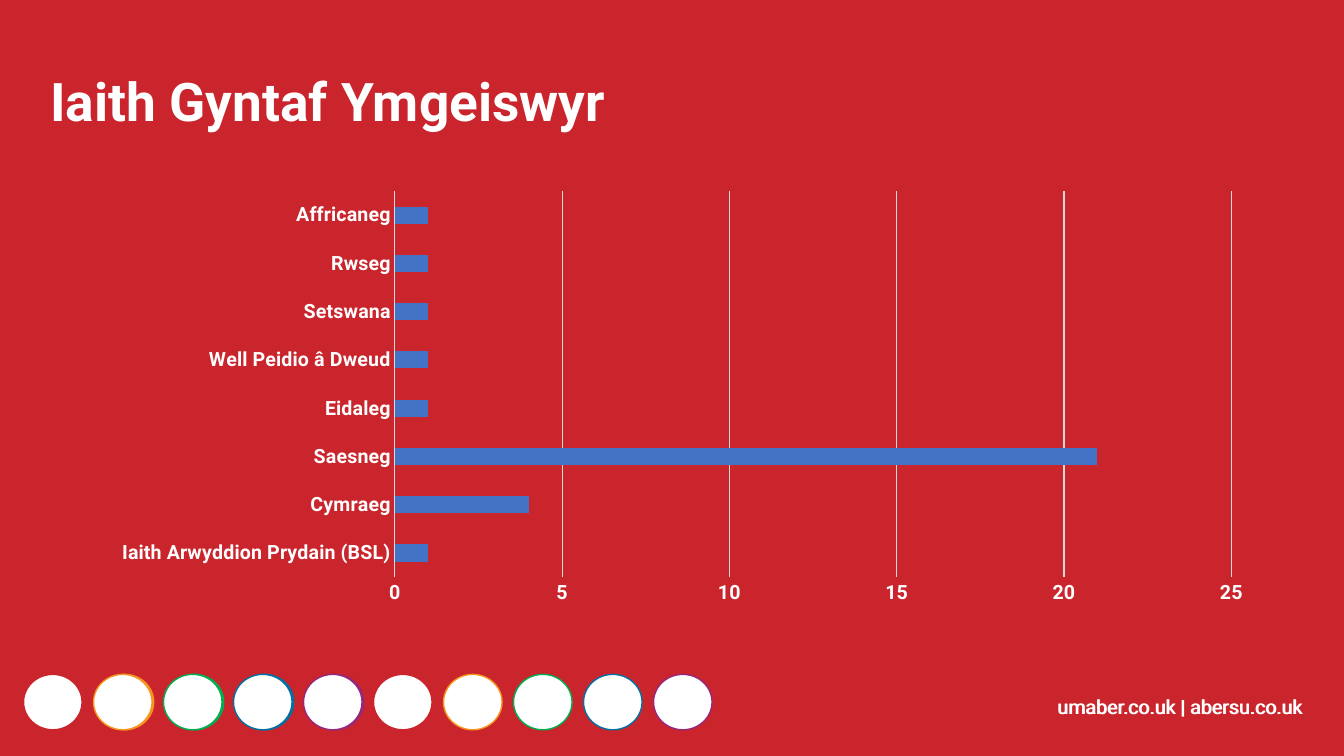
from dataclasses import dataclass

from pptx import Presentation
from pptx.chart.data import CategoryChartData
from pptx.dml.color import RGBColor
from pptx.enum.chart import XL_CHART_TYPE, XL_TICK_MARK
from pptx.enum.shapes import MSO_SHAPE
from pptx.enum.text import MSO_ANCHOR, MSO_AUTO_SIZE, PP_ALIGN
from pptx.slide import Slide
from pptx.util import Pt

RED = RGBColor(0xCA, 0x25, 0x2C)
ORANGE = RGBColor(0xF7, 0x94, 0x1F)
GREEN = RGBColor(0x00, 0xAF, 0x50)
TEAL = RGBColor(0x01, 0x71, 0xA3)
PURPLE = RGBColor(0x95, 0x27, 0x7D)
WHITE = RGBColor(0xFF, 0xFF, 0xFF)
GREY = RGBColor(0xD9, 0xD9, 0xD9)
BLUE = RGBColor(0x44, 0x72, 0xC4)
HUES = (RED, ORANGE, GREEN, TEAL, PURPLE)
FONT = "Roboto"
PITCH = 50

VOTES = {
    "Iaith Arwyddion Prydain (BSL)": 1,
    "Cymraeg": 4,
    "Saesneg": 21,
    "Eidaleg": 1,
    "Well Peidio â Dweud": 1,
    "Setswana": 1,
    "Rwseg": 1,
    "Affricaneg": 1,
}


@dataclass
class Disc:
    left: float
    fill: RGBColor
    line: RGBColor


def style(font, size: float, bold: bool) -> None:
    font.name = FONT
    font.size = Pt(size)
    font.bold = bold
    font.color.rgb = WHITE


def draw_disc(slide: Slide, disc: Disc) -> None:
    shape = slide.shapes.add_shape(
        MSO_SHAPE.OVAL, Pt(disc.left), Pt(481.7), Pt(41.8), Pt(39.6))
    shape.shadow.inherit = False
    shape.fill.solid()
    shape.fill.fore_color.rgb = disc.fill
    shape.line.color.rgb = disc.line
    shape.line.width = Pt(1)


def draw_title(slide: Slide) -> None:
    title = slide.shapes.title
    title.left, title.top = Pt(28.8), Pt(50.4)
    title.width, title.height = Pt(822.2), Pt(63.4)
    frame = title.text_frame
    frame.text = "Iaith Gyntaf Ymgeiswyr"
    frame.vertical_anchor = MSO_ANCHOR.TOP
    frame.auto_size = MSO_AUTO_SIZE.NONE
    line = frame.paragraphs[0]
    line.alignment = PP_ALIGN.LEFT
    line.line_spacing = 0.9
    style(line.runs[0].font, 38, True)


def draw_link(slide: Slide, left: float) -> None:
    box = slide.shapes.add_textbox(Pt(left), Pt(492.5), Pt(201.6), Pt(24.5))
    frame = box.text_frame
    frame.word_wrap = True
    frame.text = "umaber.co.uk | abersu.co.uk"
    style(frame.paragraphs[0].runs[0].font, 14, False)


def draw_chart(slide: Slide) -> None:
    data = CategoryChartData()
    data.categories = list(VOTES)
    data.add_series("Series 1", list(VOTES.values()))
    chart = slide.shapes.add_chart(
        XL_CHART_TYPE.BAR_CLUSTERED,
        Pt(70.6), Pt(130.3), Pt(833.8), Pt(308.2), data).chart
    chart.has_legend = False
    chart.has_title = False
    style(chart.font, 14, True)

    plot = chart.plots[0]
    plot.gap_width = 182
    plot.vary_by_categories = False
    bars = plot.series[0].format.fill
    bars.solid()
    bars.fore_color.rgb = BLUE

    names, scale = chart.category_axis, chart.value_axis
    for axis in (names, scale):
        axis.major_tick_mark = XL_TICK_MARK.NONE
        axis.minor_tick_mark = XL_TICK_MARK.NONE
        style(axis.tick_labels.font, 14, True)
    scale.minimum_scale, scale.maximum_scale = 0, 25
    scale.major_unit = 5
    scale.has_major_gridlines = True
    scale.format.line.fill.background()
    for rule in (names.format.line, scale.major_gridlines.format.line):
        rule.color.rgb = GREY
        rule.width = Pt(0.75)


def main() -> None:
    deck = Presentation()
    deck.slide_width, deck.slide_height = Pt(960), Pt(540)
    slide = deck.slides.add_slide(deck.slide_layouts[5])
    back = slide.background.fill
    back.solid()
    back.fore_color.rgb = RED

    for left in (748.1, 748.8):
        draw_link(slide, left)
    rims = [Disc(18 + i * PITCH, hue, hue)
            for i, hue in enumerate(HUES) if hue != RED]
    tops = [Disc(16.8 + i * PITCH, WHITE, hue)
            for i, hue in enumerate(HUES * 2)]
    for disc in rims + tops:
        draw_disc(slide, disc)
    draw_title(slide)
    draw_chart(slide)
    deck.save("out.pptx")


if __name__ == "__main__":
    main()
